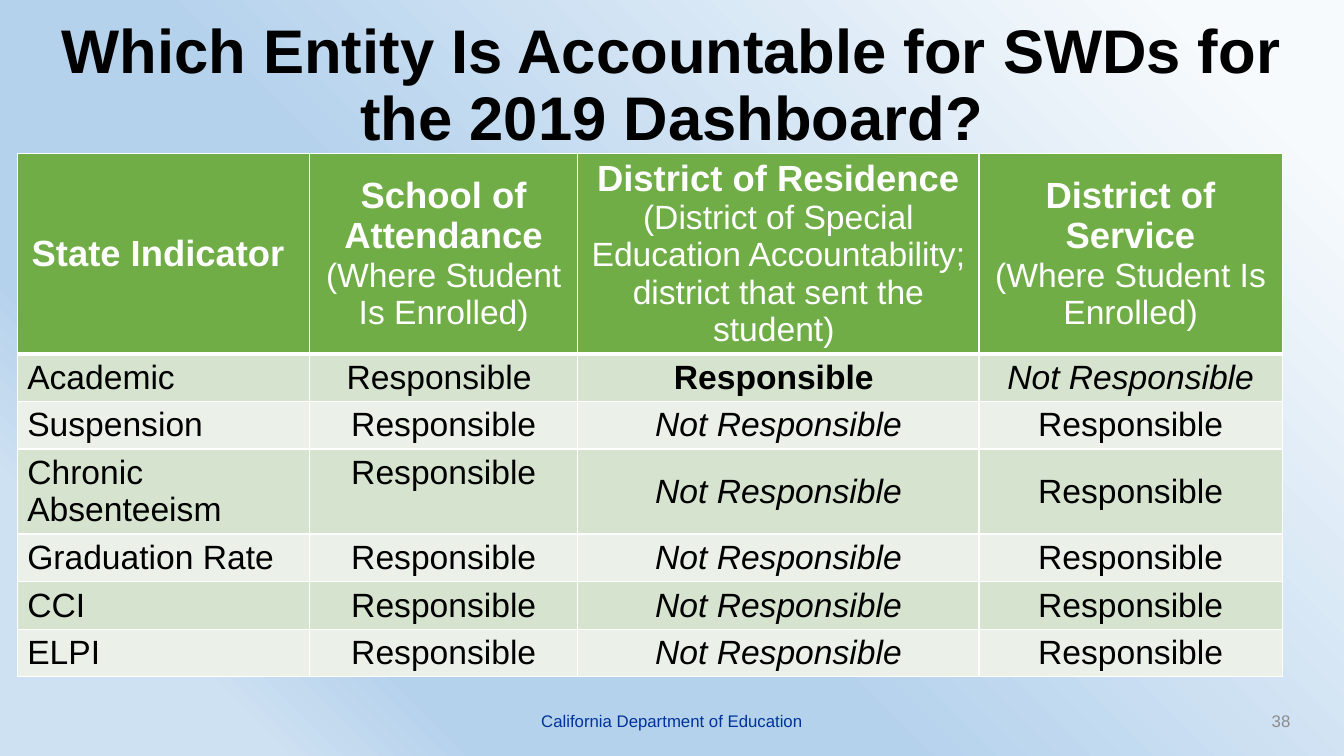
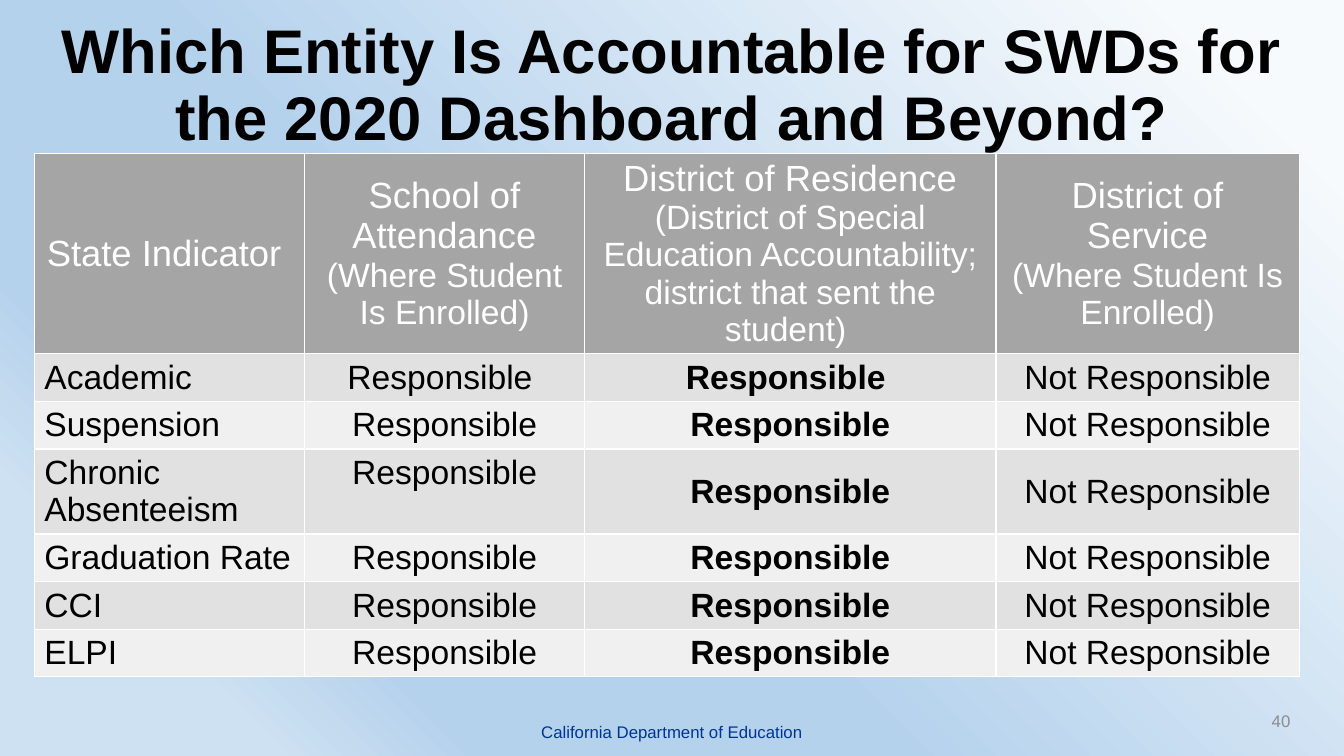
from copy import deepcopy
from dataclasses import dataclass

from lxml.etree import SubElement
from pptx import Presentation
from pptx.dml.color import RGBColor
from pptx.enum.text import MSO_ANCHOR, MSO_AUTO_SIZE, PP_ALIGN
from pptx.oxml.ns import qn
from pptx.util import Pt

# Shared look
BLACK = RGBColor(0x00, 0x00, 0x00)
WHITE = RGBColor(0xFF, 0xFF, 0xFF)
NAVY = RGBColor(0x00, 0x33, 0x99)
GRAY = RGBColor(0x8C, 0x8C, 0x8C)
GREEN = RGBColor(0x70, 0xAD, 0x47)
GREEN_BANDS = (RGBColor(0xD5, 0xE3, 0xCF), RGBColor(0xEB, 0xF1, 0xE9))
SILVER = RGBColor(0xA5, 0xA5, 0xA5)
SILVER_BANDS = (RGBColor(0xE1, 0xE1, 0xE1), RGBColor(0xF0, 0xF0, 0xF0))
SKY = (
    (0.08, RGBColor(0xF7, 0xFA, 0xFD)),
    (0.57, RGBColor(0xB5, 0xD2, 0xEC)),
    (0.77, RGBColor(0xB5, 0xD2, 0xEC)),
    (0.87, RGBColor(0xCE, 0xE1, 0xF2)),
)
SLIDE_WIDTH, SLIDE_HEIGHT = 960, 540
TABLE_TOP = 109.4
ROW_HEIGHTS = (142.8, 34, 34, 60.6, 34, 34, 34)

TITLE_FONT = {"name": "Arial", "size": Pt(44), "bold": True}
HEADING_FONT = {"name": "Arial", "size": Pt(26)}
DETAIL_FONT = {"name": "Arial", "size": Pt(24), "bold": False}
BODY_FONT = {"name": "Arial", "size": Pt(24)}
FOOTER_FONT = {"name": "Arial", "size": Pt(12)}

# Wording common to both tables
HEADINGS = (
    ("State Indicator ",),
    ("School of Attendance", "(Where Student Is Enrolled)"),
    ("District of Residence",
     "(District of Special Education Accountability; district that sent the student) "),
    ("District of Service", "(Where Student Is Enrolled)"),
)
INDICATORS = ("Academic", "Suspension", "Chronic Absenteeism",
              "Graduation Rate", "CCI", "ELPI")
YES, NO = "Responsible", "Not Responsible"
RESIDENCE = 2


@dataclass
class Accountability:
    title: str
    number: str
    left: float
    column_widths: tuple
    header_fill: RGBColor
    bands: tuple
    header_bold: bool
    header_rule: float
    italic_no: bool
    duties: tuple  # residence and service, one pair per indicator
    footer_top: float


DASHBOARDS = (
    Accountability(
        "Which Entity Is Accountable for SWDs for the 2019 Dashboard?", "38",
        12.3, (208.8, 191.7, 286.5, 216.6), GREEN, GREEN_BANDS, True, 3, True,
        ((YES + " ", NO),) + ((NO, YES),) * 5, 500.4),
    Accountability(
        "Which Entity Is Accountable for SWDs for the 2020 Dashboard and Beyond?", "40",
        24.5, (193, 200.2, 293.8, 216.6), SILVER, SILVER_BANDS, False, 1, False,
        ((YES + " ", NO),) + ((YES, NO),) * 5, 508.3),
)


def write(paragraph, text, font, color, align=PP_ALIGN.CENTER, **changes):
    """Put one formatted run in a paragraph."""
    paragraph.alignment = align
    run = paragraph.add_run()
    run.text = text
    for attribute, value in {**font, **changes}.items():
        setattr(run.font, attribute, value)
    run.font.color.rgb = color


def paint_background(master):
    fill = master.background.fill
    fill.gradient()
    fill.gradient_angle = 225
    stop_list = next(master.element.iter(qn("a:gsLst")))
    for _ in SKY[2:]:
        stop_list.append(deepcopy(stop_list[0]))
    for stop, (position, color) in zip(fill.gradient_stops, SKY):
        stop.position = position
        stop.color.rgb = color


def set_title(slide, text):
    title = slide.shapes.title
    title.left, title.top = Pt(0), Pt(0)
    title.width, title.height = Pt(SLIDE_WIDTH), Pt(124.6)
    frame = title.text_frame
    frame.word_wrap = True
    frame.auto_size = MSO_AUTO_SIZE.NONE
    frame.vertical_anchor = MSO_ANCHOR.MIDDLE
    frame.paragraphs[0].line_spacing = 0.9
    write(frame.paragraphs[0], text, TITLE_FONT, BLACK)


def add_footer(slide, text, left, top, width, color, align):
    footer = slide.shapes.add_textbox(Pt(left), Pt(top), Pt(width), Pt(28.8))
    frame = footer.text_frame
    frame.word_wrap = True
    frame.vertical_anchor = MSO_ANCHOR.MIDDLE
    write(frame.paragraphs[0], text, FOOTER_FONT, color, align)


def format_cell(cell, fill, top=1, bottom=1, anchor=MSO_ANCHOR.MIDDLE):
    """White borders first, then the fill, as the schema orders them."""
    properties = cell._tc.get_or_add_tcPr()
    for side, width in {"L": 1, "R": 1, "T": top, "B": bottom}.items():
        line = SubElement(properties, qn(f"a:ln{side}"), w=str(Pt(width)))
        solid = SubElement(line, qn("a:solidFill"))
        SubElement(solid, qn("a:srgbClr"), val=str(WHITE))
    cell.fill.solid()
    cell.fill.fore_color.rgb = fill
    cell.vertical_anchor = anchor


def fill_header(table, dashboard):
    for column, (heading, *details) in enumerate(HEADINGS):
        cell = table.cell(0, column)
        format_cell(cell, dashboard.header_fill, bottom=dashboard.header_rule)
        frame = cell.text_frame
        write(frame.paragraphs[0], heading, HEADING_FONT, WHITE,
              bold=dashboard.header_bold)
        for detail in details:
            write(frame.add_paragraph(), detail, DETAIL_FONT, WHITE)


def fill_body(table, dashboard):
    for row, (indicator, duties) in enumerate(zip(INDICATORS, dashboard.duties), 1):
        attendance = YES + " " if row == 1 else YES
        top = dashboard.header_rule if row == 1 else 1
        for column, text in enumerate((indicator, attendance, *duties)):
            cell = table.cell(row, column)
            anchor = MSO_ANCHOR.MIDDLE if column >= RESIDENCE else MSO_ANCHOR.TOP
            format_cell(cell, dashboard.bands[(row - 1) % 2], top=top, anchor=anchor)
            write(cell.text_frame.paragraphs[0], text, BODY_FONT, BLACK,
                  PP_ALIGN.CENTER if column else PP_ALIGN.LEFT,
                  bold=column == RESIDENCE and text.strip() == YES,
                  italic=dashboard.italic_no and text == NO)


def add_accountability_table(slide, dashboard):
    widths = dashboard.column_widths
    table = slide.shapes.add_table(
        len(ROW_HEIGHTS), len(widths), Pt(dashboard.left), Pt(TABLE_TOP),
        Pt(sum(widths)), Pt(sum(ROW_HEIGHTS))).table
    table.horz_banding = False
    for column, width in zip(table.columns, widths):
        column.width = Pt(width)
    for row, height in zip(table.rows, ROW_HEIGHTS):
        row.height = Pt(height)
    fill_header(table, dashboard)
    fill_body(table, dashboard)


def main():
    deck = Presentation()
    deck.slide_width, deck.slide_height = Pt(SLIDE_WIDTH), Pt(SLIDE_HEIGHT)
    paint_background(deck.slide_master)
    title_only = deck.slide_layouts.get_by_name("Title Only")

    for dashboard in DASHBOARDS:
        slide = deck.slides.add_slide(title_only)
        set_title(slide, dashboard.title)
        add_accountability_table(slide, dashboard)
        add_footer(slide, "California Department of Education", 318,
                   dashboard.footer_top, 324, NAVY, PP_ALIGN.CENTER)
        add_footer(slide, dashboard.number, 712.8, 500.4, 216, GRAY, PP_ALIGN.RIGHT)

    deck.save("out.pptx")


if __name__ == "__main__":
    main()
